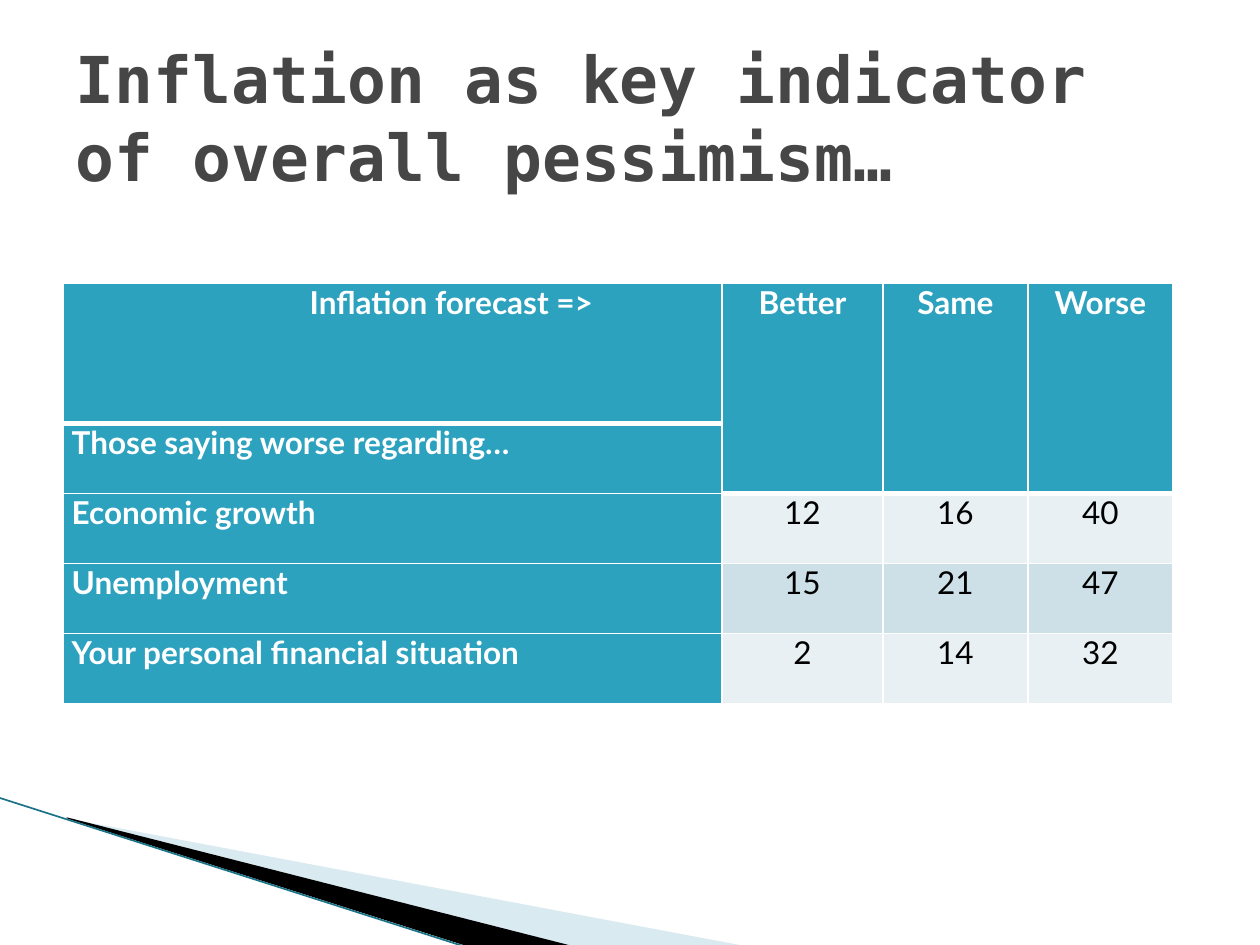
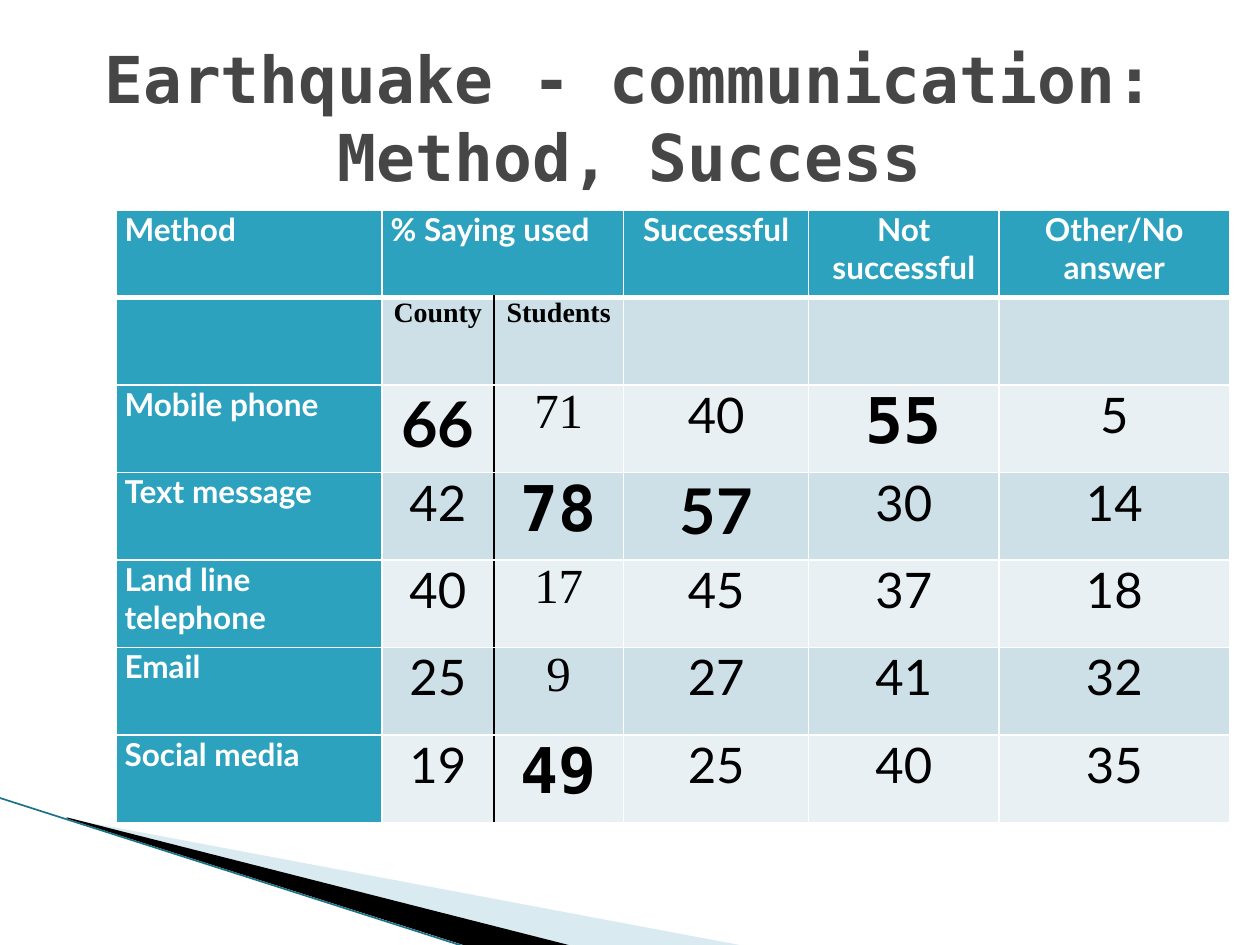
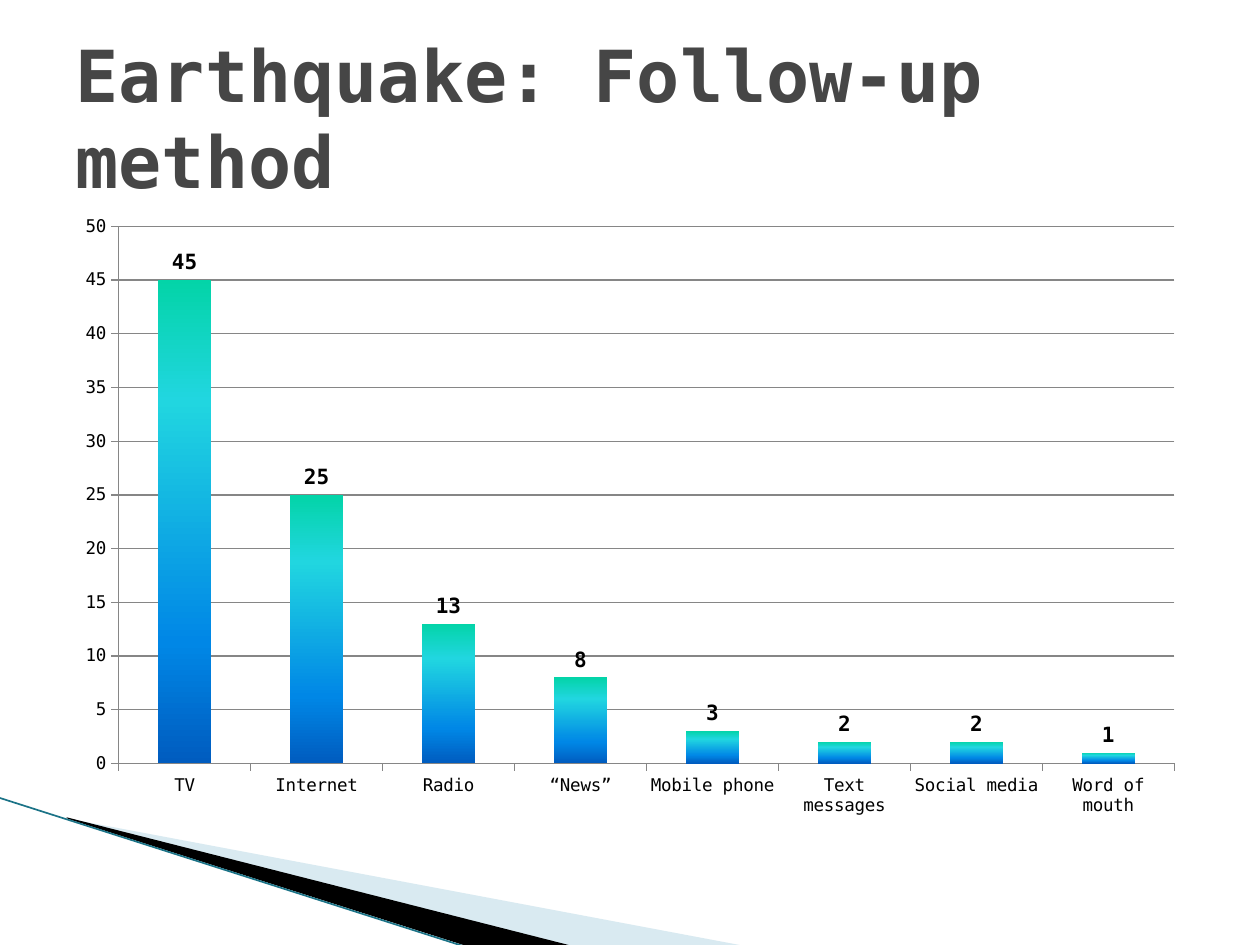
from lxml.etree import SubElement
from pptx import Presentation
from pptx.chart.data import CategoryChartData
from pptx.dml.color import RGBColor
from pptx.enum.chart import XL_CHART_TYPE as ChartType
from pptx.enum.chart import XL_LABEL_POSITION as LabelPosition
from pptx.enum.chart import XL_TICK_MARK as TickMark
from pptx.enum.shapes import MSO_CONNECTOR as Connector
from pptx.enum.text import MSO_ANCHOR as Anchor
from pptx.enum.text import MSO_AUTO_SIZE as AutoSize
from pptx.enum.text import PP_ALIGN as Align
from pptx.oxml.ns import qn
from pptx.util import Pt

MONO, SANS, SERIF = "DejaVu Sans Mono", "Lato", "Times New Roman"
BLACK, WHITE, GREY = "000000", "FFFFFF", "464646"
TEAL, LIGHT, PALE = "2DA2BF", "E8F0F4", "CDE0E8"
BAND, EDGE, GRID = "A0CBDC", "1B7387", "868686"
BAR_STOPS = [(0, "03D4A8"), (25, "21D6E0"), (75, "0087E6"), (100, "005CBF")]


def color(value):
    return RGBColor.from_string(value)


class Deck:
    def __init__(self):
        self.presentation = Presentation()
        self.presentation.slide_width = Pt(720)
        self.presentation.slide_height = Pt(540)
        self.slide = None

    def style(self, font, size, tint, name=SANS, bold=False):
        font.name, font.size, font.bold = name, Pt(size), bold
        font.color.rgb = color(tint)

    def add_slide(self, title, size=36.9, align=Align.LEFT):
        self.slide = self.presentation.slides.add_slide(self.presentation.slide_layouts[5])
        shape = self.slide.shapes.title
        shape.left, shape.top, shape.width, shape.height = Pt(36), Pt(21.6), Pt(648), Pt(90)
        frame = shape.text_frame
        frame.text = title
        frame.word_wrap = True
        frame.auto_size = AutoSize.NONE
        frame.vertical_anchor = Anchor.MIDDLE
        paragraph = frame.paragraphs[0]
        paragraph.alignment = align
        self.style(paragraph.runs[0].font, size, GREY, MONO, True)
        self.add_wedge([(39.6, 468.5), (428.4, 540.7), (328.3, 540.7), (39.6, 468)], BAND, 40)
        self.add_wedge([(38.2, 467.3), (329, 540.7), (267.8, 541.4), (38.9, 468)], BLACK)
        self.add_line(-0.7, 455.8, 267.1, 541.4)

    def add_wedge(self, points, tint, opacity=100):
        builder = self.slide.shapes.build_freeform(*points[0], scale=Pt(1))
        builder.add_line_segments(points[1:])
        shape = builder.convert_to_shape()
        shape.shadow.inherit = False
        shape.line.fill.background()
        shape.fill.solid()
        shape.fill.fore_color.rgb = color(tint)
        if opacity < 100:
            tint_element = next(shape._element.spPr.iter(qn("a:srgbClr")))
            SubElement(tint_element, qn("a:alpha"), val=str(opacity * 1000))

    def add_line(self, *ends):
        line = self.slide.shapes.add_connector(Connector.STRAIGHT, *map(Pt, ends))
        line.line.width = Pt(0.95)
        line.line.color.rgb = color(EDGE)
        SubElement(line._element.spPr, qn("a:effectLst"))

    def border(self, cell, side, tint=WHITE, width=1):
        properties = cell._tc.get_or_add_tcPr()
        tag = qn("a:ln" + side)
        line = properties.find(tag)
        if line is None:
            line = SubElement(properties, tag)
            SubElement(SubElement(line, qn("a:solidFill")), qn("a:srgbClr"))
        line.set("w", str(Pt(width)))
        line.find(".//" + qn("a:srgbClr")).set("val", tint)

    def add_table(self, left, top, widths, heights):
        frame = self.slide.shapes.add_table(
            len(heights), len(widths), Pt(left), Pt(top), Pt(sum(widths)), Pt(sum(heights)))
        table = frame.table
        table.first_row = table.horz_banding = False
        for column, width in zip(table.columns, widths):
            column.width = Pt(width)
        for row, height in zip(table.rows, heights):
            row.height = Pt(height)
        for cell in table.iter_cells():
            cell.margin_left = cell.margin_right = Pt(5)
            cell.margin_top = cell.margin_bottom = 0
            for side in "LRTB":
                self.border(cell, side)
        return table

    def fill_table(self, table, rows, header_rows, body_size):
        for r, values in enumerate(rows):
            for c, value in enumerate(values):
                cell = table.cell(r, c)
                heading = r < header_rows or c == 0
                cell.fill.solid()
                cell.fill.fore_color.rgb = color(TEAL if heading else PALE if r % 2 else LIGHT)
                if value:
                    cell.text_frame.text = value
                    paragraph = cell.text_frame.paragraphs[0]
                    paragraph.alignment = Align.CENTER if c else Align.LEFT
                    self.style(paragraph.runs[0].font, 18 if heading else body_size,
                               WHITE if heading else BLACK, bold=heading)

    def restyle(self, cell, size, name, bold):
        self.style(cell.text_frame.paragraphs[0].runs[0].font, size, BLACK, name, bold)

    def rule_below(self, table, row, column):
        self.border(table.cell(row, column), "B", width=3)
        self.border(table.cell(row + 1, column), "T", width=3)

    def add_column_chart(self, left, top, width, height, categories, values):
        data = CategoryChartData()
        data.categories = categories
        data.add_series("Series 1", values)
        chart = self.slide.shapes.add_chart(
            ChartType.COLUMN_CLUSTERED, Pt(left), Pt(top), Pt(width), Pt(height), data).chart
        chart.has_legend = chart.has_title = False
        self.style(chart.font, 10, BLACK, MONO)
        value_axis = chart.value_axis
        value_axis.minimum_scale, value_axis.maximum_scale, value_axis.major_unit = 0, 50, 5
        value_axis.has_major_gridlines = True
        value_axis.major_gridlines.format.line.color.rgb = color(GRID)
        for axis in (chart.category_axis, value_axis):
            axis.major_tick_mark = TickMark.OUTSIDE
            axis.format.line.color.rgb = color(GRID)
        plot = chart.plots[0]
        plot.gap_width = 150
        plot.vary_by_categories = False
        plot.has_data_labels = True
        labels = plot.data_labels
        labels.show_value = True
        labels.position = LabelPosition.OUTSIDE_END
        self.style(labels.font, 12, BLACK, MONO, True)
        self.fill_gradient(plot.series[0])

    def fill_gradient(self, series):
        series.invert_if_negative = False
        series.format.fill.gradient()
        gradient = next(series._element.iter(qn("a:gradFill")))
        for child in list(gradient):
            gradient.remove(child)
        stops = SubElement(gradient, qn("a:gsLst"))
        for position, tint in BAR_STOPS:
            stop = SubElement(stops, qn("a:gs"), pos=str(position * 1000))
            SubElement(stop, qn("a:srgbClr"), val=tint)
        SubElement(gradient, qn("a:lin"), ang="5400000", scaled="0")


def inflation_slide(deck):
    deck.add_slide("Inflation as key indicator of overall pessimism…")
    table = deck.add_table(36, 162, [376.6, 92, 82.8, 82.8], [80, 40, 40, 40, 40])
    deck.fill_table(table, [
        ("Inflation forecast =>", "Better", "Same", "Worse"),
        ("Those saying worse regarding…", "", "", ""),
        ("Economic growth", "12", "16", "40"),
        ("Unemployment", "15", "21", "47"),
        ("Your personal financial situation", "2", "14", "32"),
    ], header_rows=2, body_size=18)
    forecast = table.cell(0, 0).text_frame.paragraphs[0]
    forecast._p.get_or_add_pPr().set("marL", str(Pt(136)))
    deck.rule_below(table, 0, 0)
    for column in range(1, 4):
        table.cell(0, column).merge(table.cell(1, column))
        deck.border(table.cell(0, column), "B", width=3)
        deck.rule_below(table, 1, column)


def communication_slide(deck):
    deck.add_slide("Earthquake - communication: Method, Success", align=Align.CENTER)
    table = deck.add_table(66.2, 120.2, [152, 64, 74.2, 105.8, 108.7, 131.8], [50] * 7)
    deck.fill_table(table, [
        ("Method", "% Saying used", "", "Successful", "Not successful", "Other/No answer"),
        ("", "County", "Students", "", "", ""),
        ("Mobile phone", "66", "71", "40", "55", "5"),
        ("Text message", "42", "78", "57", "30", "14"),
        ("Land line telephone", "40", "17", "45", "37", "18"),
        ("Email", "25", "9", "27", "41", "32"),
        ("Social media", "19", "49", "25", "40", "35"),
    ], header_rows=1, body_size=28)
    table.cell(0, 1).merge(table.cell(0, 2))
    table.cell(0, 1).text_frame.paragraphs[0].alignment = Align.LEFT
    for column in range(6):
        deck.rule_below(table, 0, column)
    for row in range(1, 7):
        deck.border(table.cell(row, 1), "R", BLACK)
        deck.border(table.cell(row, 2), "L", BLACK)
        deck.restyle(table.cell(row, 2), 28, SERIF, False)
    for column in (1, 2):
        deck.restyle(table.cell(1, column), 16, SERIF, True)
    highlights = {(2, 1): SANS, (3, 3): SANS, (2, 4): MONO, (3, 2): MONO, (6, 2): MONO}
    for place, name in highlights.items():
        deck.restyle(table.cell(*place), 36, name, True)


def follow_up_slide(deck):
    deck.add_slide("Earthquake: Follow-up method", size=41)
    deck.add_column_chart(
        36, 116.6, 648, 356.4,
        ["TV", "Internet", "Radio", "“News”", "Mobile phone", "Text messages",
         "Social media", "Word of mouth"],
        [45, 25, 13, 8, 3, 2, 2, 1])


def main():
    deck = Deck()
    inflation_slide(deck)
    communication_slide(deck)
    follow_up_slide(deck)
    deck.presentation.save("out.pptx")


if __name__ == "__main__":
    main()
